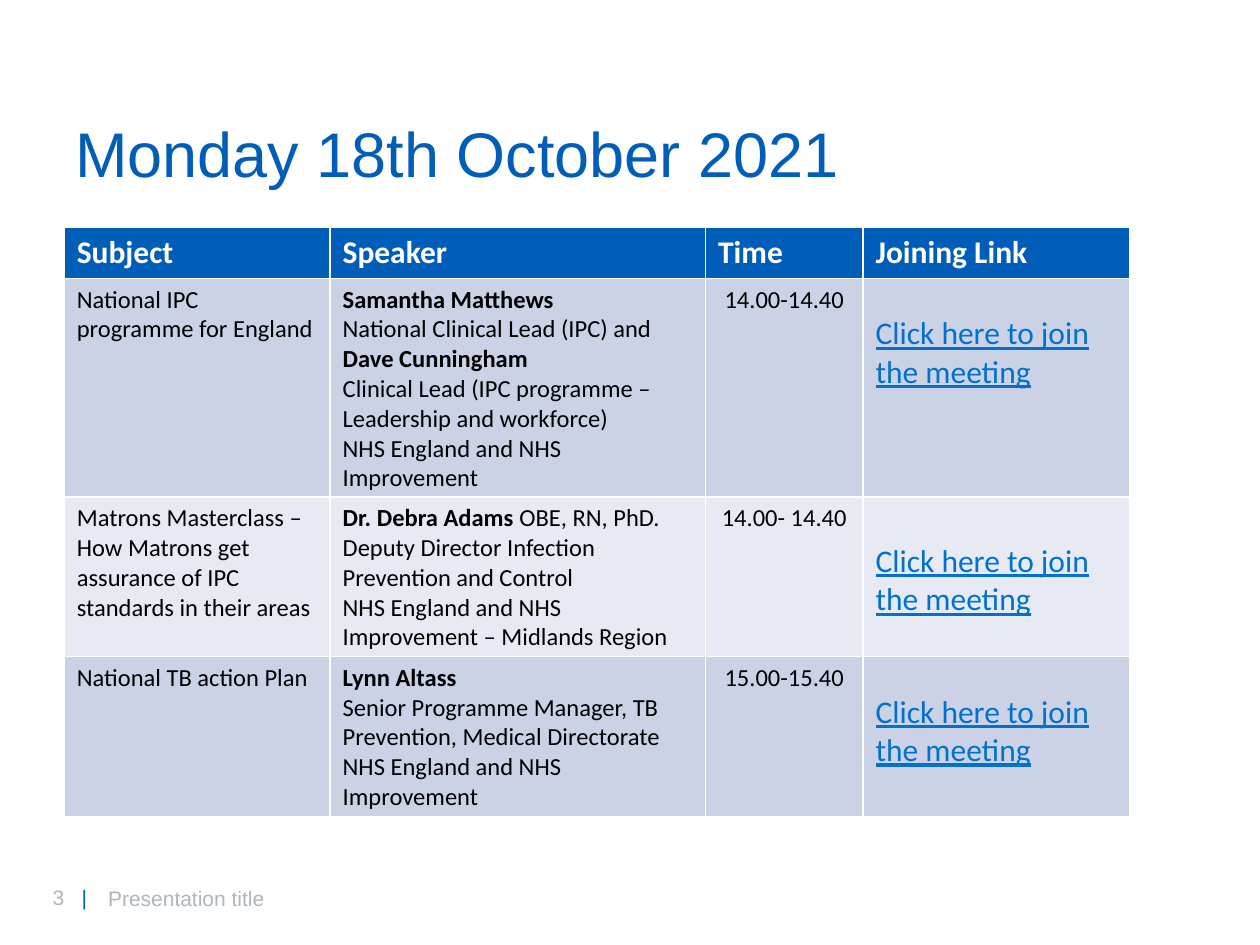
from pptx import Presentation
from pptx.dml.color import RGBColor
from pptx.enum.text import MSO_ANCHOR, PP_ALIGN
from pptx.oxml.ns import qn
from pptx.util import Inches, Pt
from lxml import etree

CENTER = PP_ALIGN.CENTER
LEFT = PP_ALIGN.LEFT
TOP = MSO_ANCHOR.TOP
MIDDLE = MSO_ANCHOR.MIDDLE

BLUE, LINK_BLUE, GREY = "005EB8", "0072CE", "ADB6BE"
WHITE, BLACK = "FFFFFF", "000000"
BANDS = ("CCD2E6", "E7EAF3")

COLUMN_WIDTHS = (2.11, 2.98, 1.25, 2.12)
ROW_HEIGHTS = (0.41, 1.73, 1.26, 1.26)
HEADINGS = ("Subject", "Speaker", "Time", "Joining Link")
LINK_TEXT = "Click here to join the meeting"
SESSIONS = (
    ("National IPC programme for England",
     ((("Samantha Matthews", True),),
      (("National Clinical Lead (IPC) and ", False), ("Dave Cunningham", True)),
      (("Clinical Lead (IPC programme – Leadership and workforce)", False),),
      (("NHS England and NHS Improvement", False),)),
     "14.00-14.40", 0.29),
    ("Matrons Masterclass – How Matrons get assurance of IPC standards in their areas",
     ((("Dr. Debra Adams ", True), ("OBE, RN, PhD.", False)),
      (("Deputy Director Infection Prevention and Control", False),),
      (("NHS England and NHS Improvement – Midlands Region", False),)),
     "14.00- 14.40", 0.36),
    ("National TB action Plan",
     ((("Lynn Altass", True),),
      (("Senior Programme Manager, TB", False),),
      (("Prevention, Medical Directorate", False),),
      (("NHS England and NHS Improvement", False),)),
     "15.00-15.40", 0.29),
)


def color(hex_string):
    """Turn a hex string into a colour."""
    return RGBColor.from_string(hex_string)


def add_span(para, text, size, hex_string, font="Calibri", bold=False, underline=False):
    """Add one formatted run to a paragraph."""
    span = para.add_run()
    span.text = text
    span.font.name = font
    span.font.size = Pt(size)
    span.font.color.rgb = color(hex_string)
    span.font.bold = bold
    span.font.underline = underline


def add_box(page, left, top, width, height, anchor=TOP):
    """Add a wrapping text box and return its first paragraph."""
    box = page.shapes.add_textbox(Inches(left), Inches(top), Inches(width), Inches(height))
    box.text_frame.word_wrap = True
    box.text_frame.vertical_anchor = anchor
    return box.text_frame.paragraphs[0]


def add_tab_stop(para, position):
    """Set a left tab stop on a paragraph."""
    stops = etree.SubElement(para._p.get_or_add_pPr(), qn("a:tabLst"))
    etree.SubElement(stops, qn("a:tab"), pos=str(Inches(position)), algn="l")


def fill_cell(cell, fill, lines, size=14, text_color=BLACK, align=LEFT, underline=False):
    """Fill a cell and write its lines of (text, bold) runs."""
    cell.fill.solid()
    cell.fill.fore_color.rgb = color(fill)
    frame = cell.text_frame
    for index, line in enumerate(lines):
        para = frame.add_paragraph() if index else frame.paragraphs[0]
        para.alignment = align
        for text, bold in line:
            add_span(para, text, size, text_color, bold=bold, underline=underline)


def add_schedule(page):
    """Add the table of sessions."""
    table = page.shapes.add_table(
        len(ROW_HEIGHTS), len(COLUMN_WIDTHS), Inches(0.51), Inches(1.8),
        Inches(sum(COLUMN_WIDTHS)), Inches(sum(ROW_HEIGHTS))).table
    for column, width in zip(table.columns, COLUMN_WIDTHS):
        column.width = Inches(width)
    for row, height in zip(table.rows, ROW_HEIGHTS):
        row.height = Inches(height)
    for index, heading in enumerate(HEADINGS):
        fill_cell(table.cell(0, index), BLUE, [[(heading, True)]], 18, WHITE)
    for number, (subject, speakers, time, link_margin) in enumerate(SESSIONS, 1):
        band = BANDS[(number - 1) % 2]
        fill_cell(table.cell(number, 0), band, [[(subject, False)]])
        fill_cell(table.cell(number, 1), band, speakers)
        fill_cell(table.cell(number, 2), band, [[(time, False)]], align=CENTER)
        link = table.cell(number, 3)
        link.margin_top = Inches(link_margin)
        fill_cell(link, band, [[(LINK_TEXT, False)]], 18, LINK_BLUE, underline=True)


def add_footer(page):
    """Add the page number, its divider and the footer text."""
    number = add_box(page, 0.32, 6.97, 0.71, 0.3)
    add_tab_stop(number, 0.23)
    add_span(number, "3\t", 12, GREY, "Arial")
    add_span(number, "|", 12, BLUE, "Arial")
    footer = add_box(page, 0.76, 6.93, 6.26, 0.4, MIDDLE)
    add_span(footer, "Presentation title", 12, GREY, "Arial")


def main():
    """Build and save the schedule slide."""
    deck = Presentation()
    deck.slide_width, deck.slide_height = Inches(10), Inches(7.5)
    page = deck.slides.add_slide(deck.slide_layouts[6])
    title = add_box(page, 0.5, 0.93, 7.18, 0.67)
    title.line_spacing = 0.9
    add_span(title, "Monday 18th October 2021", 36, BLUE, "Arial")
    add_schedule(page)
    add_footer(page)
    deck.save("out.pptx")


if __name__ == "__main__":
    main()
